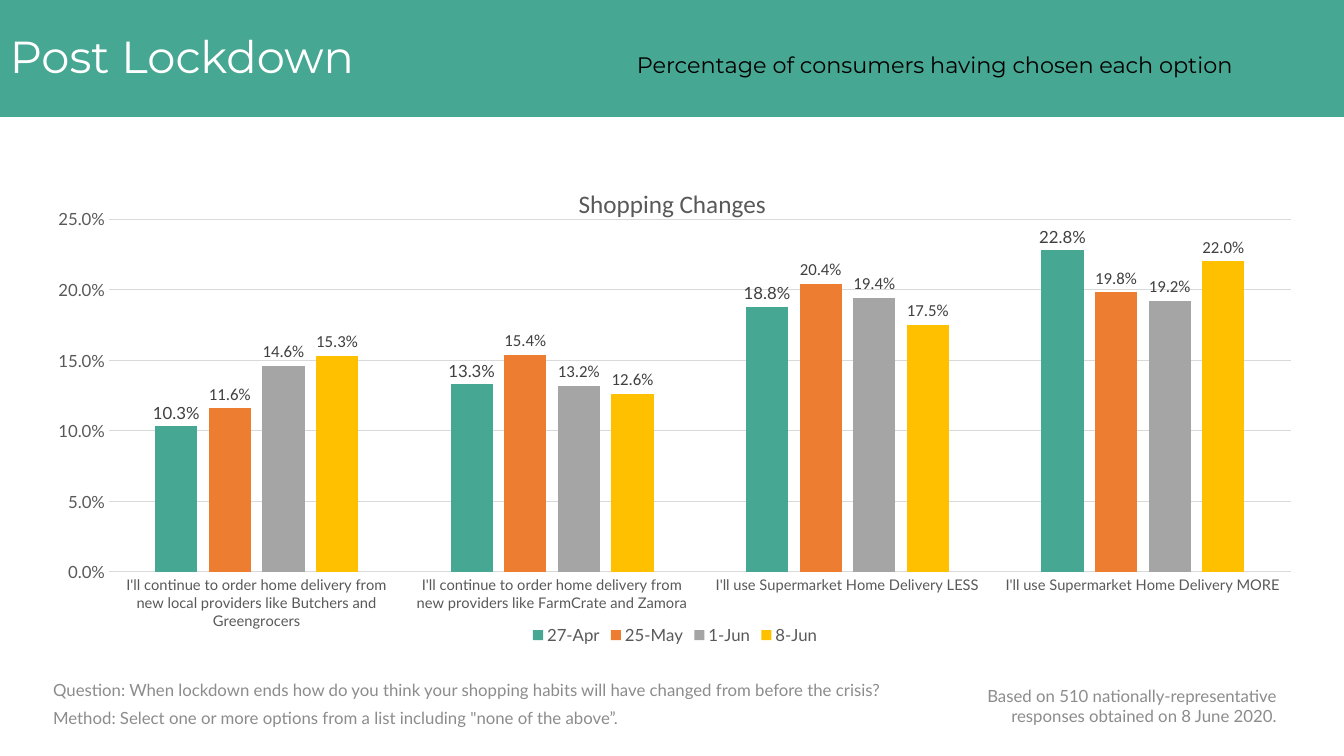
from dataclasses import dataclass

from pptx import Presentation
from pptx import util as u
from pptx.chart.data import CategoryChartData
from pptx.dml.color import RGBColor
from pptx.enum import chart as ch
from pptx.enum import shapes, text
from pptx.oxml import parse_xml
from pptx.oxml.ns import nsdecls, qn


@dataclass(frozen=True)
class Theme:
    green: str = "46A792"
    orange: str = "ED7D31"
    silver: str = "A5A5A5"
    yellow: str = "FFC000"
    white: str = "FFFFFF"
    black: str = "000000"
    axis: str = "595959"
    label: str = "404040"
    grid: str = "D9D9D9"
    note: str = "8C8C8C"
    head: str = "Montserrat"
    body: str = "Lato"
    chart: str = "Calibri"
    title_size: float = 32
    subtitle_size: float = 16
    chart_title_size: float = 18
    text_size: float = 12
    category_size: float = 10.5


def style_font(font, name, size, color):
    font.name = name
    font.size = u.Pt(size)
    font.bold = False
    font.color.rgb = RGBColor.from_string(color)


def add_text(p, content, *, name, size, color, align=None):
    if align is not None:
        p.alignment = align
    r = p.add_run()
    r.text = content
    style_font(r.font, name, size, color)


def place(element, index, target=None, **fractions):
    for old in element.findall(qn("c:layout")):
        element.remove(old)
    inner = f'<c:layoutTarget val="{target}"/>' if target else ""
    inner += '<c:xMode val="edge"/><c:yMode val="edge"/>'
    inner += "".join(f'<c:{k} val="{v}"/>' for k, v in fractions.items())
    element.insert(index, parse_xml(
        f'<c:layout {nsdecls("c")}><c:manualLayout>{inner}</c:manualLayout></c:layout>'))


class SlideBuilder:
    def __init__(self, slide, theme):
        self.slide = slide
        self.theme = theme

    def banner(self, title, subtitle, width, height, tab):
        t = self.theme
        sp = self.slide.shapes.add_shape(
            shapes.MSO_SHAPE.RECTANGLE, 0, 0, width, u.Cm(height))
        sp.shadow.inherit = False
        sp.fill.solid()
        sp.fill.fore_color.rgb = RGBColor.from_string(t.green)
        sp.line.fill.background()
        tf = sp.text_frame
        tf.word_wrap = True
        tf.vertical_anchor = text.MSO_ANCHOR.MIDDLE
        p = tf.paragraphs[0]
        p.line_spacing = 0.9
        p._p.get_or_add_pPr().append(parse_xml(
            f'<a:tabLst {nsdecls("a")}><a:tab pos="{u.Cm(tab)}" algn="l"/></a:tabLst>'))
        add_text(p, title + "\t", name=t.head, size=t.title_size, color=t.white,
                 align=text.PP_ALIGN.LEFT)
        add_text(p, subtitle, name=t.head, size=t.subtitle_size, color=t.black)

    def note(self, content, left, top, width, align=text.PP_ALIGN.LEFT):
        t = self.theme
        sp = self.slide.shapes.add_textbox(
            u.Cm(left), u.Cm(top), u.Cm(width), u.Cm(1.02))
        tf = sp.text_frame
        tf.word_wrap = True
        tf.vertical_anchor = text.MSO_ANCHOR.MIDDLE
        add_text(tf.paragraphs[0], content, name=t.body, size=t.text_size,
                 color=t.note, align=align)

    def column_chart(self, title, categories, series, left, top, width, height):
        t = self.theme
        data = CategoryChartData(number_format="0.0%")
        data.categories = categories
        for name, _, _, values in series:
            data.add_series(name, values)
        chart = self.slide.shapes.add_chart(
            ch.XL_CHART_TYPE.COLUMN_CLUSTERED, u.Cm(left), u.Cm(top),
            u.Cm(width), u.Cm(height), data).chart
        style_font(chart.font, t.chart, t.text_size, t.axis)
        chart.has_title = True
        add_text(chart.chart_title.text_frame.paragraphs[0], title,
                 name=t.chart, size=t.chart_title_size, color=t.axis)
        chart.chart_title.include_in_layout = False
        place(chart.chart_title._element, 1, x=0.42, y=0.05)
        chart.has_legend = True
        chart.legend.position = ch.XL_LEGEND_POSITION.BOTTOM
        chart.legend.include_in_layout = False
        style_font(chart.legend.font, t.body, t.text_size, t.axis)
        self.axes(chart)
        plot = chart.plots[0]
        plot.gap_width = 219
        plot.overlap = -27
        plot.vary_by_categories = False
        for bars, (_, color, font_name, _) in zip(plot.series, series):
            bars.format.fill.solid()
            bars.format.fill.fore_color.rgb = RGBColor.from_string(color)
            labels = bars.data_labels
            labels.show_value = True
            labels.number_format = "0.0%"
            labels.number_format_is_linked = False
            labels.position = ch.XL_LABEL_POSITION.OUTSIDE_END
            style_font(labels.font, font_name, t.text_size, t.label)
        area = chart._chartSpace.find(".//" + qn("c:plotArea"))
        place(area, 0, "inner", x=0.052, y=0.126, w=0.935, h=0.717)

    def axes(self, chart):
        t = self.theme
        cat, val = chart.category_axis, chart.value_axis
        for axis, size in ((cat, t.category_size), (val, t.text_size)):
            axis.major_tick_mark = axis.minor_tick_mark = ch.XL_TICK_MARK.NONE
            style_font(axis.tick_labels.font, t.body, size, t.axis)
        val.minimum_scale, val.maximum_scale, val.major_unit = 0, 0.25, 0.05
        val.tick_labels.number_format = "0.0%"
        val.tick_labels.number_format_is_linked = False
        val.has_major_gridlines = True
        val.format.line.fill.background()
        for line in (cat.format.line, val.major_gridlines.format.line):
            line.color.rgb = RGBColor.from_string(t.grid)
            line.width = u.Pt(0.75)


def main():
    prs = Presentation()
    prs.slide_width, prs.slide_height = u.Cm(33.87), u.Cm(19.05)
    t = Theme()
    s = SlideBuilder(prs.slides.add_slide(prs.slide_layouts[6]), t)
    s.banner("Post Lockdown", "Percentage of consumers having chosen each option",
             prs.slide_width, 2.95, tab=15.8)
    s.column_chart(
        "Shopping Changes",
        ["I'll continue to order home delivery from new local providers like "
         "Butchers and Greengrocers",
         "I'll continue to order home delivery from new providers like "
         "FarmCrate and Zamora",
         "I'll use Supermarket Home Delivery LESS",
         "I'll use Supermarket Home Delivery MORE"],
        [("27-Apr", t.green, t.body, (0.103, 0.133, 0.188, 0.228)),
         ("25-May", t.orange, t.chart, (0.116, 0.154, 0.204, 0.198)),
         ("1-Jun", t.silver, t.chart, (0.146, 0.132, 0.194, 0.192)),
         ("8-Jun", t.yellow, t.chart, (0.153, 0.126, 0.175, 0.22))],
        1.09, 3.96, 31.85, 12.4)
    s.note("Question: When lockdown ends how do you think your shopping habits "
           "will have changed from before the crisis?", 1.09, 16.87, 24.2)
    s.note('Method: Select one or more options from a list including '
           '"none of the above”.', 1.09, 17.58, 24.2)
    s.note("Based on 510 nationally-representative responses obtained on 8 June 2020.",
           23.67, 17.27, 8.76, text.PP_ALIGN.RIGHT)
    prs.save("out.pptx")


if __name__ == "__main__":
    main()
